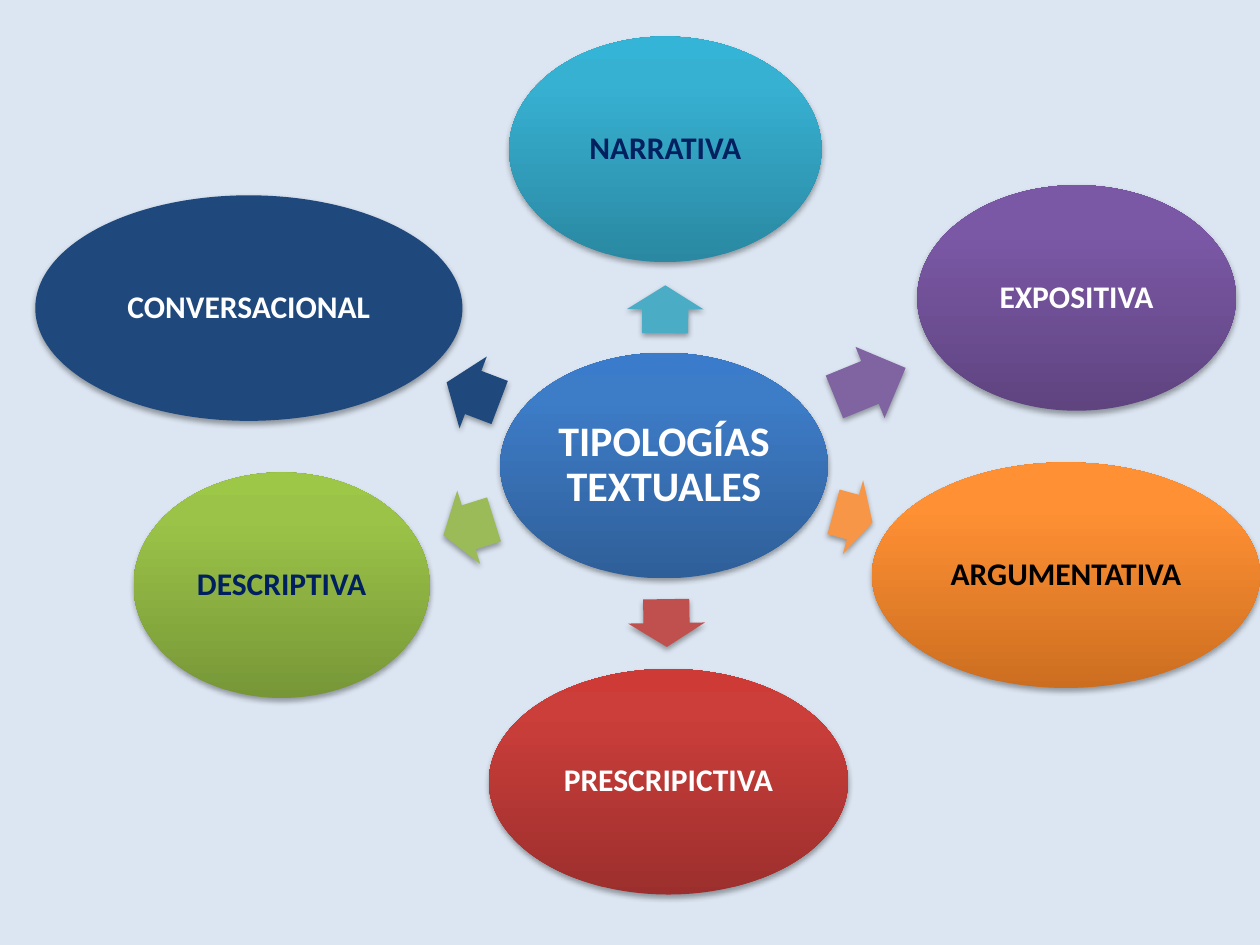
import copy

import lxml.etree
import pptx
import pptx.dml.color
import pptx.enum.shapes
import pptx.enum.text
import pptx.oxml.ns
import pptx.util

SHAPES = pptx.enum.shapes.MSO_SHAPE
WIDTH, HEIGHT = pptx.util.Inches(10), pptx.util.Inches(7.5)
OVAL_H, ARROW_H = 23.87, 8.13
COLORS = {
    "background": "DCE6F2", "white": "FFFFFF", "navy": "002060", "black": "000000",
    "red": "C0504D", "green": "9BBB59", "purple": "8064A2",
    "aqua": "4BACC6", "orange": "F79646", "dark blue": "1F497D",
}
GRADIENTS = {
    "blue": ("2F5F99", "3D7CC7", "3A7CCB"),
    "red": ("9C2F2D", "CB3E3A", "CE3B37"),
    "green": ("779737", "9BC348", "9DC746"),
    "purple": ("5F4480", "7B58A6", "7C57A8"),
    "aqua": ("2A88A2", "37B1D2", "34B4D6"),
    "orange": ("CC6E20", "FF9034", "FF9136"),
}
CENTER = ("TIPOLOGÍAS TEXTUALES", "blue", "white", (52.7, 49.27, 26))
TYPES = [
    ("PRESCRIPICTIVA", "red", "white", (53.05, 82.73, 28.5), (52.9, 65.93, 3.8, 89.2)),
    ("DESCRIPTIVA", "green", "navy", (22.35, 61.93, 23.5), (37.2, 55.8, 4.2, 162.6)),
    ("EXPOSITIVA", "purple", "white", (85.45, 31.53, 25.3), (69.05, 40.47, 6.1, 337.8)),
    ("NARRATIVA", "aqua", "navy", (52.8, 15.8, 24.8), (52.8, 32.73, 3.8, 270.2)),
    ("ARGUMENTATIVA", "orange", "black", (84.6, 60.87, 30.8), (67.7, 54.73, 3.2, 15.3)),
    ("CONVERSACIONAL", "dark blue", "white", (19.75, 32.6, 33.9), (37.55, 41.53, 4.5, 200.8)),
]


def rgb(value):
    """Turn a hex string into a colour."""
    return pptx.dml.color.RGBColor.from_string(value)


def paint_solid(fill, name):
    """Fill with one named colour."""
    fill.solid()
    fill.fore_color.rgb = rgb(COLORS[name])


def paint_gradient(s, name):
    """Fill a shape with a three-stop gradient that rises from the bottom."""
    s.fill.gradient()
    s.fill.gradient_angle = 90
    stops = s._element.spPr.find(".//" + pptx.oxml.ns.qn("a:gsLst"))
    stops.append(copy.deepcopy(stops[0]))
    for stop, position, value in zip(s.fill.gradient_stops, (0, 0.8, 1), GRADIENTS[name]):
        stop.position = position
        stop.color.rgb = rgb(value)


def add_shadow(s):
    """Give a shape a soft shadow straight below it."""
    qn = pptx.oxml.ns.qn
    s.shadow.inherit = False
    effects = s._element.spPr.find(qn("a:effectLst"))
    shadow = lxml.etree.SubElement(
        effects, qn("a:outerShdw"), blurRad="40000", dist="23000", dir="5400000", rotWithShape="0")
    color = lxml.etree.SubElement(shadow, qn("a:srgbClr"), val=COLORS["black"])
    lxml.etree.SubElement(color, qn("a:alpha"), val="35000")


def add_centered(slide, kind, x, y, w, h):
    """Add an unlined shape around a centre, in percent of the slide."""
    s = slide.shapes.add_shape(
        kind, int(WIDTH * (x - w / 2) / 100), int(HEIGHT * (y - h / 2) / 100),
        int(WIDTH * w / 100), int(HEIGHT * h / 100))
    s.line.fill.background()
    add_shadow(s)
    return s


def add_oval(slide, text, fill, font_color, place, size=18):
    """Add a labelled ellipse."""
    s = add_centered(slide, SHAPES.OVAL, *place, OVAL_H)
    if fill in GRADIENTS:
        paint_gradient(s, fill)
    else:
        paint_solid(s.fill, fill)
    tf = s.text_frame
    tf.word_wrap = True
    tf.vertical_anchor = pptx.enum.text.MSO_ANCHOR.MIDDLE
    tf.margin_left = tf.margin_right = tf.margin_top = tf.margin_bottom = pptx.util.Inches(0.03)
    p = tf.paragraphs[0]
    p.alignment = pptx.enum.text.PP_ALIGN.CENTER
    p.line_spacing = 0.9
    r = p.add_run()
    r.text = text
    r.font.name = "Calibri"
    r.font.size = pptx.util.Pt(size)
    r.font.bold = True
    r.font.color.rgb = rgb(COLORS[font_color])


def add_arrow(slide, color, x, y, w, angle):
    """Add a block arrow turned by an angle."""
    s = add_centered(slide, SHAPES.RIGHT_ARROW, x, y, w, ARROW_H)
    s.adjustments[0], s.adjustments[1] = 0.6, 0.5
    s.rotation = angle
    paint_solid(s.fill, color)


def main():
    """Build the radial diagram of text types."""
    prs = pptx.Presentation()
    prs.slide_width, prs.slide_height = WIDTH, HEIGHT
    slide = prs.slides.add_slide(prs.slide_layouts[6])
    paint_solid(slide.background.fill, "background")
    add_oval(slide, *CENTER, size=24)
    for text, color, font_color, oval, arrow in TYPES:
        add_arrow(slide, color, *arrow)
        add_oval(slide, text, color, font_color, oval)
    prs.save("out.pptx")


if __name__ == "__main__":
    main()
